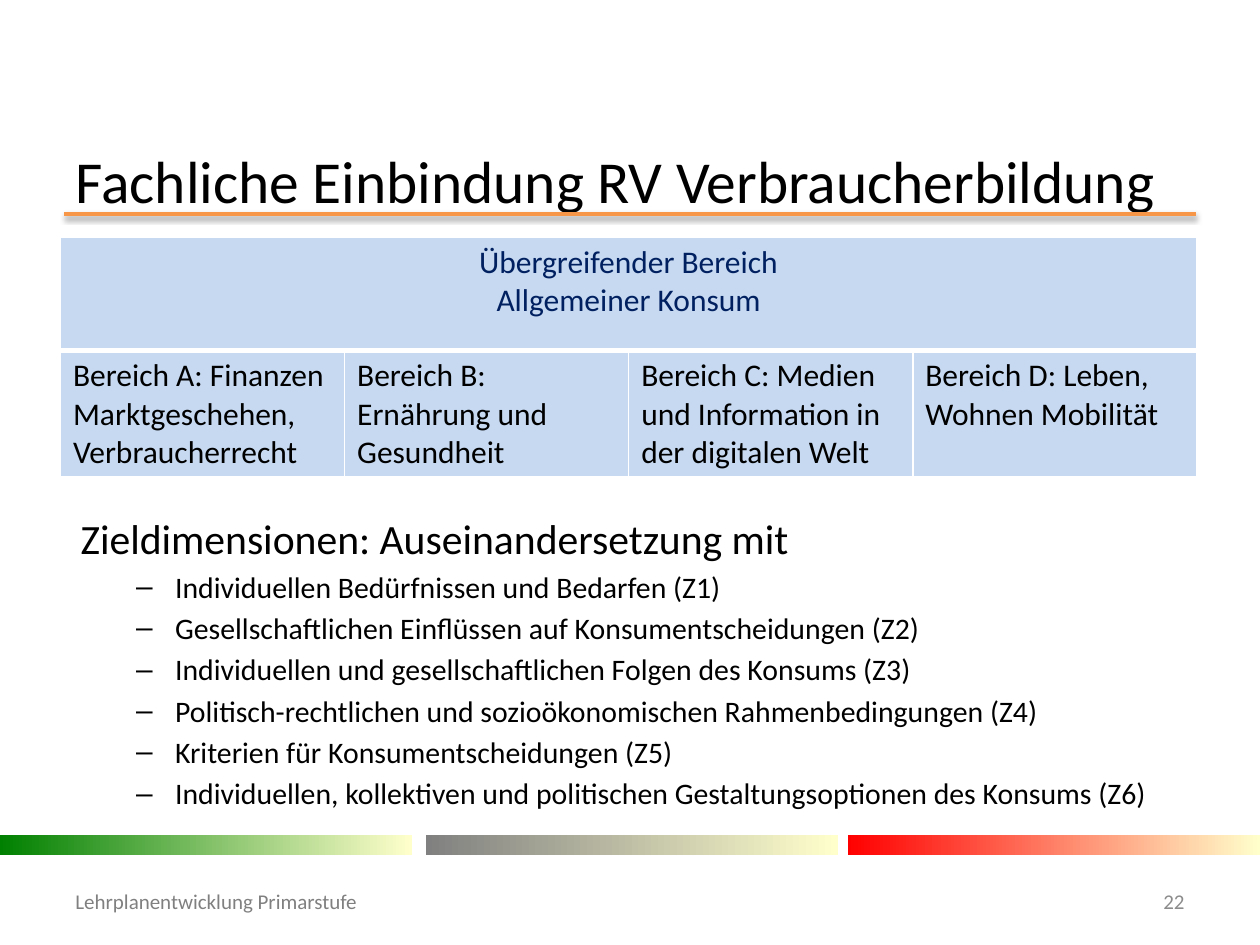
from dataclasses import dataclass

from lxml.etree import SubElement
from pptx import Presentation
from pptx.dml.color import RGBColor
from pptx.enum.shapes import MSO_CONNECTOR, MSO_SHAPE
from pptx.enum.text import MSO_ANCHOR, MSO_AUTO_SIZE, PP_ALIGN
from pptx.oxml import parse_xml
from pptx.oxml.ns import nsdecls, qn
from pptx.util import Inches, Pt

FONT = "Calibri"
BLACK, WHITE, CREAM, PALE = "000000", "FFFFFF", "FFFFCC", "C6D9F1"


@dataclass
class Band:
    left: float
    hue: str


@dataclass
class Label:
    text: str
    left: float
    width: float
    hue: str
    align: PP_ALIGN


BANDS = [Band(0, "008000"), Band(3.38, "808080"), Band(6.73, "FF0000")]
LABELS = [
    Label("Lehrplanentwicklung Primarstufe", 0.5, 3.08, "808080", PP_ALIGN.LEFT),
    Label("22", 8.86, 0.64, "8C8C8C", PP_ALIGN.RIGHT),
]
HEAD = "Übergreifender Bereich\nAllgemeiner Konsum"
AREAS = [
    "Bereich A: Finanzen Marktgeschehen, Verbraucherrecht",
    "Bereich B: Ernährung und Gesundheit",
    "Bereich C: Medien und Information in der digitalen Welt",
    "Bereich D: Leben, Wohnen Mobilität",
]
GOALS = [
    "Individuellen Bedürfnissen und Bedarfen (Z1)",
    "Gesellschaftlichen Einflüssen auf Konsumentscheidungen (Z2)",
    "Individuellen und gesellschaftlichen Folgen des Konsums (Z3)",
    "Politisch-rechtlichen und sozioökonomischen Rahmenbedingungen (Z4)",
    "Kriterien für Konsumentscheidungen (Z5)",
    "Individuellen, kollektiven und politischen Gestaltungsoptionen des Konsums (Z6)",
]


def rgb(code: str) -> RGBColor:
    return RGBColor.from_string(code)


def place(shape, left: float, top: float, width: float, height: float) -> None:
    shape.left, shape.top = Inches(left), Inches(top)
    shape.width, shape.height = Inches(width), Inches(height)


def style(para, size: float, hue: str, align: PP_ALIGN = PP_ALIGN.LEFT) -> None:
    para.alignment = align
    for run in para.runs:
        run.font.name, run.font.size = FONT, Pt(size)
        run.font.color.rgb = rgb(hue)


def indent(para, left: float, first: float) -> None:
    props = para._p.get_or_add_pPr()
    props.set("marL", str(Inches(left)))
    props.set("indent", str(Inches(first)))


def draw_rule(slide) -> None:
    rule = slide.shapes.add_connector(
        MSO_CONNECTOR.STRAIGHT, Inches(0.51), Inches(1.7), Inches(9.49), Inches(1.7))
    rule.line.color.rgb = rgb("F79646")
    rule.line.width = Pt(2)
    rule._element.spPr.append(parse_xml(
        f'<a:effectLst {nsdecls("a")}>'
        f'<a:outerShdw blurRad="{Pt(3.1)}" dist="{Pt(1.6)}" dir="5400000" rotWithShape="0">'
        '<a:srgbClr val="000000"><a:alpha val="38000"/></a:srgbClr>'
        '</a:outerShdw></a:effectLst>'))


def draw_band(slide, band: Band) -> None:
    bar = slide.shapes.add_shape(
        MSO_SHAPE.RECTANGLE, Inches(band.left), Inches(6.63), Inches(3.27), Inches(0.16))
    bar.shadow.inherit = False
    bar.line.fill.background()
    bar.fill.gradient()
    bar.fill.gradient_angle = 0
    for stop, hue in zip(bar.fill.gradient_stops, (band.hue, CREAM)):
        stop.color.rgb = rgb(hue)


def draw_label(slide, label: Label) -> None:
    box = slide.shapes.add_textbox(
        Inches(label.left), Inches(6.95), Inches(label.width), Inches(0.4))
    frame = box.text_frame
    frame.word_wrap = True
    frame.vertical_anchor = MSO_ANCHOR.MIDDLE
    frame.text = label.text
    style(frame.paragraphs[0], 12, label.hue, label.align)


def fill_title(title) -> None:
    place(title, 0.5, 1.23, 9, 0.39)
    frame = title.text_frame
    frame.auto_size = MSO_AUTO_SIZE.NONE
    frame.vertical_anchor = MSO_ANCHOR.MIDDLE
    frame.text = "Fachliche Einbindung RV Verbraucherbildung"
    style(frame.paragraphs[0], 34, BLACK)


def fill_body(body) -> None:
    place(body, 0.48, 4.02, 9, 2.57)
    body.fill.solid()
    body.fill.fore_color.rgb = rgb(WHITE)
    frame = body.text_frame
    frame.auto_size = MSO_AUTO_SIZE.NONE
    frame.text = "\n".join(["Zieldimensionen: Auseinandersetzung mit", *GOALS])
    lead, *goals = frame.paragraphs
    indent(lead, 0.06, 0)
    SubElement(lead._p.get_or_add_pPr(), qn("a:buNone"))
    lead.space_before = Pt(0)
    style(lead, 23.8, BLACK)
    for goal in goals:
        goal.level = 1
        indent(goal, 0.81, -0.31)
        SubElement(goal._p.get_or_add_pPr(), qn("a:buChar")).set("char", "–")
        goal.space_before = Pt(3.2)
        style(goal, 17, BLACK)


def paint(cell, top: float, base: float) -> None:
    props = cell._tc.get_or_add_tcPr()
    for side, width in zip("LRTB", (1, 1, top, base)):
        props.append(parse_xml(
            f'<a:ln{side} {nsdecls("a")} w="{Pt(width)}"><a:solidFill>'
            f'<a:srgbClr val="{WHITE}"/></a:solidFill></a:ln{side}>'))
    cell.fill.solid()
    cell.fill.fore_color.rgb = rgb(PALE)


def write(cell, text: str, hue: str, align: PP_ALIGN) -> None:
    cell.text_frame.text = text
    for para in cell.text_frame.paragraphs:
        style(para, 18, hue, align)


def draw_table(slide) -> None:
    table = slide.shapes.add_table(
        2, len(AREAS), Inches(0.48), Inches(1.88), Inches(9.02), Inches(1.9)).table
    for row, height in zip(table.rows, (0.9, 1)):
        row.height = Inches(height)
    for col, area in enumerate(AREAS):
        paint(table.cell(0, col), 1, 3)
        paint(table.cell(1, col), 3, 1)
        write(table.cell(1, col), area, BLACK, PP_ALIGN.LEFT)
    table.cell(0, 0).merge(table.cell(0, len(AREAS) - 1))
    write(table.cell(0, 0), HEAD, "002060", PP_ALIGN.CENTER)


def main() -> None:
    deck = Presentation()
    deck.slide_width, deck.slide_height = Inches(10), Inches(7.5)
    slide = deck.slides.add_slide(deck.slide_layouts[1])
    draw_rule(slide)
    for band in BANDS:
        draw_band(slide, band)
    fill_title(slide.shapes.title)
    fill_body(slide.placeholders[1])
    for label in LABELS:
        draw_label(slide, label)
    draw_table(slide)
    deck.save("out.pptx")


if __name__ == "__main__":
    main()
